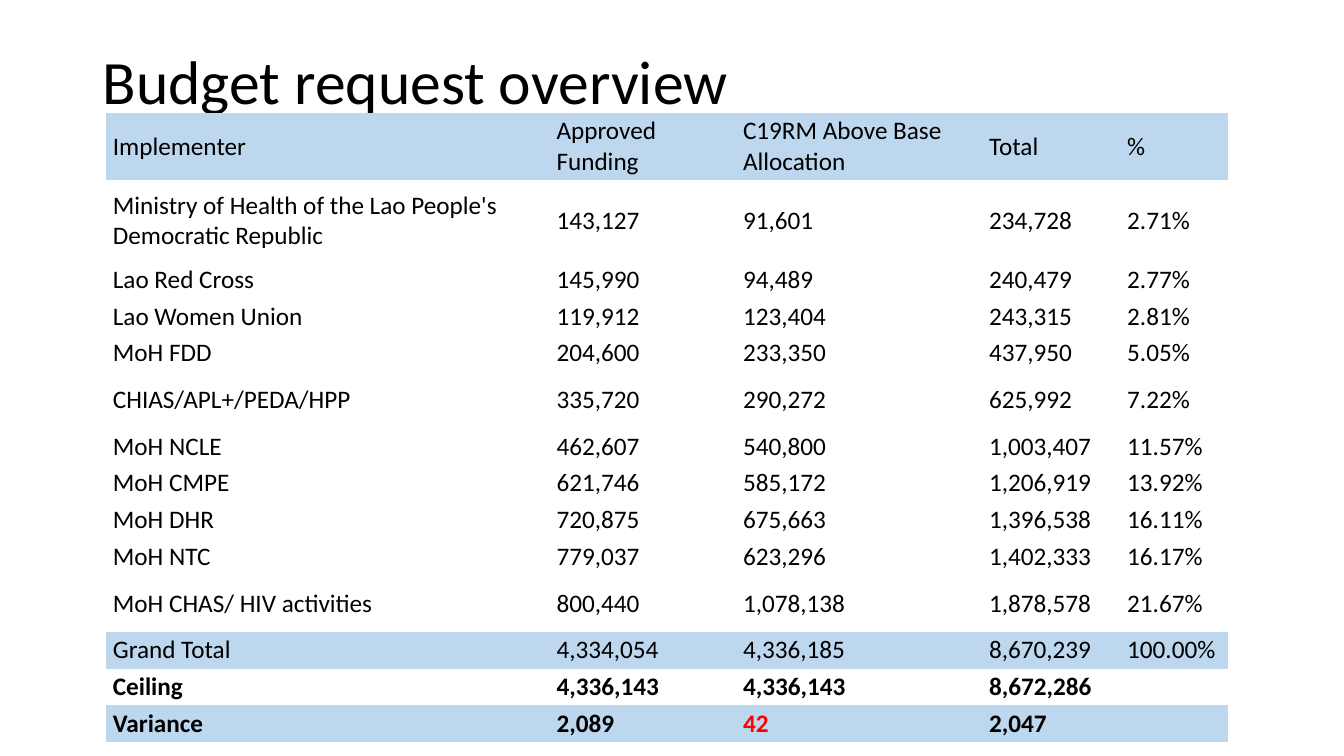
from pptx import Presentation
from pptx.dml.color import RGBColor
from pptx.enum.text import MSO_ANCHOR, PP_ALIGN
from pptx.util import Inches, Pt

MIDDLE = MSO_ANCHOR.MIDDLE
LEFT = PP_ALIGN.LEFT
FONT = "Calibri"
COLORS = {"text": "000000", "band": "BDD7EE", "alert": "FF0000"}
PLAIN = "{2D5ABB26-0587-4C30-8999-92F81FD0307C}"
WIDTHS = [4.4, 1.85, 2.44, 1.37, 1.07]
LOW, MID, TALL = 0.32, 0.56, 0.8
BANDS = {"Implementer", "Grand Total", "Variance"}
BOLD = {"Ceiling", "Variance"}
ROWS = [
    (MID, "Implementer", "Approved Funding", "C19RM Above Base Allocation", "Total", "%"),
    (TALL, "Ministry of Health of the Lao People's Democratic Republic",
     "143,127", "91,601", "234,728", "2.71%"),
    (LOW, "Lao Red Cross", "145,990", "94,489", "240,479", "2.77%"),
    (LOW, "Lao Women Union", "119,912", "123,404", "243,315", "2.81%"),
    (LOW, "MoH FDD", "204,600", "233,350", "437,950", "5.05%"),
    (MID, "CHIAS/APL+/PEDA/HPP", "335,720", "290,272", "625,992", "7.22%"),
    (LOW, "MoH NCLE", "462,607", "540,800", "1,003,407", "11.57%"),
    (LOW, "MoH CMPE", "621,746", "585,172", "1,206,919", "13.92%"),
    (LOW, "MoH DHR", "720,875", "675,663", "1,396,538", "16.11%"),
    (LOW, "MoH NTC", "779,037", "623,296", "1,402,333", "16.17%"),
    (MID, "MoH CHAS/ HIV activities", "800,440", "1,078,138", "1,878,578", "21.67%"),
    (LOW, "Grand Total", "4,334,054", "4,336,185", "8,670,239", "100.00%"),
    (LOW, "Ceiling", "4,336,143", "4,336,143", "8,672,286", ""),
    (LOW, "Variance", "2,089", "42", "2,047", ""),
]


def style(para, size, color="text", bold=False):
    """Format every run of a paragraph."""
    for run in para.runs:
        font = run.font
        font.name, font.size, font.bold = FONT, Pt(size), bold
        font.color.rgb = RGBColor.from_string(COLORS[color])


def add_title(slide, box, text):
    """Fill the title placeholder and move it to the box."""
    title = slide.shapes.title
    title.left, title.top, title.width, title.height = map(Inches, box)
    frame = title.text_frame
    frame.text = text
    frame.vertical_anchor = MIDDLE
    para = frame.paragraphs[0]
    para.alignment = LEFT
    para.line_spacing = 0.9
    style(para, 44)


def fill_cell(cell, text, band, color, bold):
    """Write and format one table cell."""
    cell.text = text
    cell.vertical_anchor = MIDDLE
    cell.margin_left = cell.margin_right = Inches(0.07)
    cell.margin_top = cell.margin_bottom = Inches(0.03)
    if band:
        cell.fill.solid()
        cell.fill.fore_color.rgb = RGBColor.from_string(COLORS["band"])
    else:
        cell.fill.background()
    style(cell.text_frame.paragraphs[0], 18, color, bold)


def add_budget(slide, box):
    """Place the budget table in the box."""
    table = slide.shapes.add_table(len(ROWS), len(WIDTHS), *map(Inches, box)).table
    table.first_row = table.horz_banding = False
    table._tbl.tblPr[0].text = PLAIN
    for col, width in zip(table.columns, WIDTHS):
        col.width = Inches(width)
    for row, (height, *texts) in zip(table.rows, ROWS):
        row.height = Inches(height)
        name = texts[0]
        for cell, text in zip(row.cells, texts):
            color = "alert" if text == "42" else "text"
            fill_cell(cell, text, name in BANDS, color, name in BOLD)


def main():
    """Build and save the slide."""
    deck = Presentation()
    deck.slide_width, deck.slide_height = Inches(13.33), Inches(7.5)
    slide = deck.slides.add_slide(deck.slide_layouts[5])
    add_title(slide, (0.92, 0.11, 11.5, 1.45), "Budget request overview")
    add_budget(slide, (1.05, 1.12, sum(WIDTHS), sum(row[0] for row in ROWS)))
    deck.save("out.pptx")


if __name__ == "__main__":
    main()
